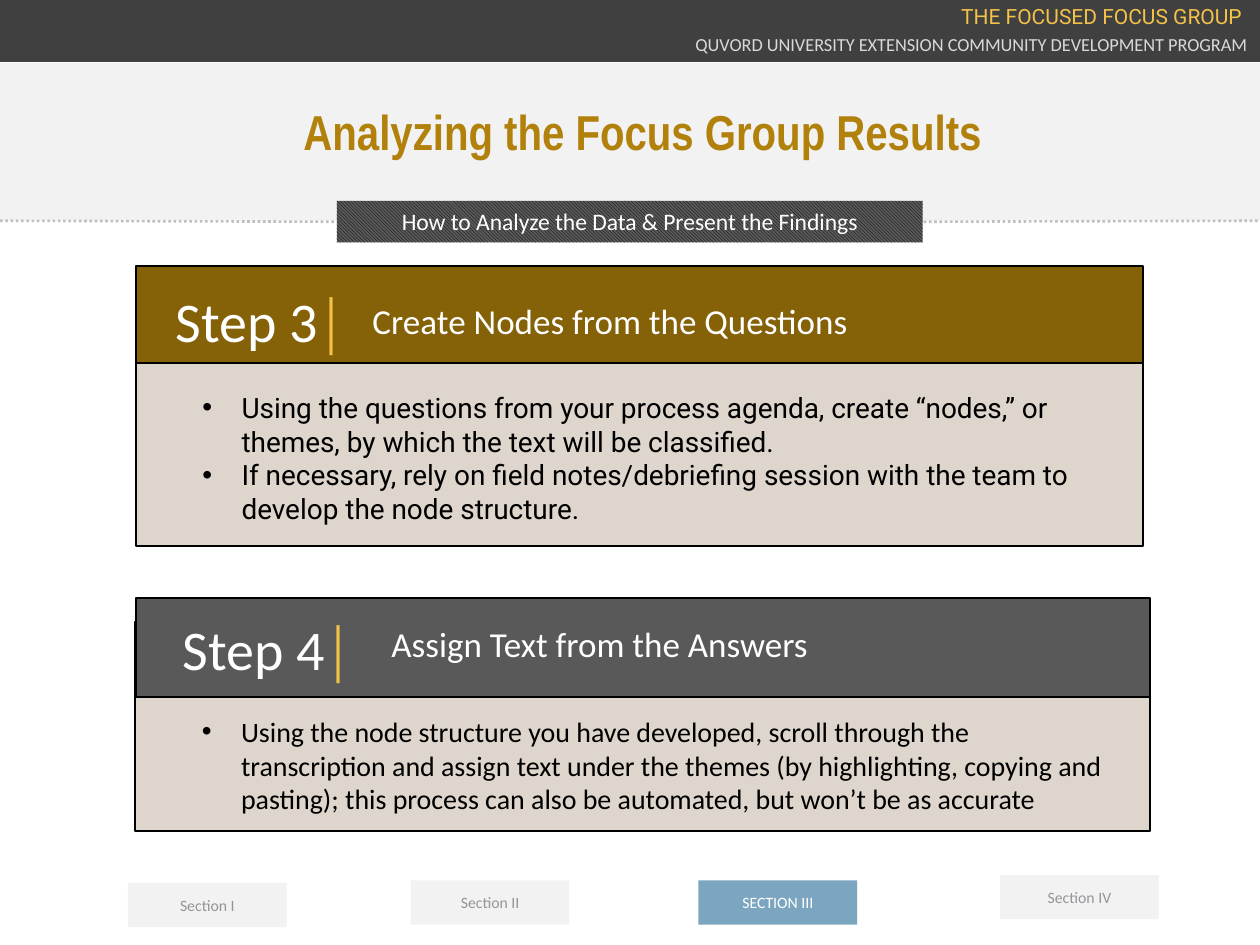
import dataclasses

import lxml.etree
import pptx
import pptx.dml.color
import pptx.enum.dml
import pptx.enum.shapes
import pptx.enum.text
import pptx.oxml.ns
import pptx.util

Cm = pptx.util.Cm
Align = pptx.enum.text.PP_ALIGN
Anchor = pptx.enum.text.MSO_ANCHOR


@dataclasses.dataclass(frozen=True)
class Theme:
    """Colours, fonts and type sizes of the slide."""

    white: str = "FFFFFF"
    black: str = "000000"
    pale: str = "F2F2F2"
    dark: str = "404040"
    slate: str = "595959"
    dots: str = "BFBFBF"
    program: str = "D9D9D9"
    muted: str = "949599"
    gold: str = "F4C249"
    title: str = "B1810B"
    brown: str = "856108"
    sand: str = "DED6CC"
    blue: str = "7CA6C0"
    body_font: str = "Calibri"
    title_font: str = "Arial Narrow"
    accent_font: str = "Roboto"
    bullet_font: str = "Arial"
    title_size: float = 28
    step_size: float = 32
    heading_size: float = 20
    bullet_size: float = 16
    banner_size: float = 13.5
    group_size: float = 12
    program_size: float = 10.5
    tab_size: float = 9


class SlideBuilder:
    """Draws styled elements on one slide, with boxes given in centimetres."""

    def __init__(self, slide, theme):
        self.slide = slide
        self.theme = theme

    def color(self, value):
        return pptx.dml.color.RGBColor.from_string(value)

    def style(self, paragraph, size, color, font=None, align=Align.LEFT, bold=False):
        paragraph.alignment = align
        paragraph.font.name = font or self.theme.body_font
        paragraph.font.size = pptx.util.Pt(size)
        paragraph.font.bold = bold
        paragraph.font.color.rgb = self.color(color)

    def rectangle(self, box, fill, outline=None):
        kind = pptx.enum.shapes.MSO_SHAPE.RECTANGLE
        shape = self.slide.shapes.add_shape(kind, *map(Cm, box))
        shape.shadow.inherit = False
        shape.fill.solid()
        shape.fill.fore_color.rgb = self.color(fill)
        if outline:
            shape.line.color.rgb = self.color(outline)
            shape.line.width = pptx.util.Pt(1)
        else:
            shape.line.fill.background()
        return shape

    def label(self, box, text, fill, size, color, anchor=Anchor.MIDDLE):
        shape = self.rectangle(box, fill)
        shape.text_frame.vertical_anchor = anchor
        paragraph = shape.text_frame.paragraphs[0]
        paragraph.text = text
        self.style(paragraph, size, color, align=Align.CENTER)
        return shape

    def banner(self, box, text):
        theme = self.theme
        shape = self.label(box, text, theme.slate, theme.banner_size, theme.white, Anchor.TOP)
        shape.fill.patterned()
        shape.fill.pattern = pptx.enum.dml.MSO_PATTERN.DARK_DOWNWARD_DIAGONAL
        shape.fill.fore_color.rgb = self.color(theme.black)
        shape.fill.back_color.rgb = self.color(theme.slate)

    def text_frame(self, box):
        frame = self.slide.shapes.add_textbox(*map(Cm, box)).text_frame
        frame.word_wrap = True
        return frame

    def text(self, box, text, size, color, **options):
        paragraph = self.text_frame(box).paragraphs[0]
        paragraph.text = text
        self.style(paragraph, size, color, **options)
        return paragraph

    def bullets(self, box, items, font):
        frame = self.text_frame(box)
        for index, item in enumerate(items):
            paragraph = frame.add_paragraph() if index else frame.paragraphs[0]
            paragraph.text = item
            paragraph.level = 1
            self.style(paragraph, self.theme.bullet_size, self.theme.black, font)
            properties = paragraph._p.get_or_add_pPr()
            properties.set("marL", str(Cm(2.08)))
            properties.set("indent", str(Cm(-0.79)))
            run_defaults = properties.find(pptx.oxml.ns.qn("a:defRPr"))
            for tag, name, value in [("a:buFont", "typeface", self.theme.bullet_font),
                                     ("a:buChar", "char", "•")]:
                element = lxml.etree.Element(pptx.oxml.ns.qn(tag), {name: value})
                run_defaults.addprevious(element)

    def dotted_line(self, *points):
        kind = pptx.enum.shapes.MSO_CONNECTOR.STRAIGHT
        connector = self.slide.shapes.add_connector(kind, *map(Cm, points))
        connector.line.color.rgb = self.color(self.theme.dots)
        connector.line.width = pptx.util.Pt(1.5)
        connector.line.dash_style = pptx.enum.dml.MSO_LINE.ROUND_DOT
        properties = connector._element.spPr
        lxml.etree.SubElement(properties, pptx.oxml.ns.qn("a:effectLst"))

    def step(self, name, heading, items, fill, font, boxes):
        theme = self.theme
        self.rectangle(boxes["body"], theme.sand, theme.black)
        self.rectangle(boxes["header"], fill, theme.black)
        self.text(boxes["heading"], heading, theme.heading_size, theme.white)
        paragraph = self.text(boxes["name"], name, theme.step_size, theme.white)
        divider = paragraph.add_run()
        divider.text = "│"
        divider.font.color.rgb = self.color(theme.gold)
        self.bullets(boxes["bullets"], items, font)


def main():
    presentation = pptx.Presentation()
    presentation.slide_width, presentation.slide_height = Cm(25.4), Cm(19.05)
    theme = Theme()
    builder = SlideBuilder(presentation.slides.add_slide(presentation.slide_layouts[6]), theme)

    builder.rectangle((0, 1.27, 25.4, 3.18), theme.pale)
    builder.banner((6.79, 4.05, 11.81, 0.84), "How to Analyze the Data & Present the Findings")
    builder.dotted_line(0, 4.45, 6.78, 4.47)
    builder.dotted_line(18.62, 4.47, 25.4, 4.45)
    builder.text((4.96, 1.93, 15.98, 1.45), "Analyzing the Focus Group Results", theme.title_size,
                 theme.title, font=theme.title_font, align=Align.CENTER, bold=True)

    builder.rectangle((0, 0, 25.4, 1.25), theme.dark)
    builder.text((8.81, 0.54, 16.59, 0.71),
                 "QUVORD UNIVERSITY EXTENSION COMMUNITY DEVELOPMENT PROGRAM",
                 theme.program_size, theme.program, align=Align.RIGHT)
    builder.text((8.93, -0.05, 16.36, 0.76), "THE FOCUSED FOCUS GROUP", theme.group_size,
                 theme.gold, font=theme.accent_font, align=Align.RIGHT)

    builder.step(
        "Step 3", "Create Nodes from the Questions",
        ["Using the questions from your process agenda, create “nodes,” or themes, "
         "by which the text will be classified.",
         "If necessary, rely on field notes/debriefing session with the team to "
         "develop the node structure."],
        theme.brown, theme.accent_font,
        {"body": (2.74, 6.48, 20.3, 4.53), "header": (2.74, 5.36, 20.3, 1.96),
         "heading": (7.26, 5.92, 15.09, 1.12), "name": (3.29, 5.66, 9.78, 1.63),
         "bullets": (2.54, 7.75, 19.79, 3)})
    builder.step(
        "Step 4", "Assign Text from the Answers",
        ["Using the node structure you have developed, scroll through the transcription "
         "and assign text under the themes (by highlighting, copying and pasting); "
         "this process can also be automated, but won’t be as accurate"],
        theme.slate, theme.body_font,
        {"body": (2.72, 12.53, 20.47, 4.22), "header": (2.74, 12.05, 20.45, 2.01),
         "heading": (7.64, 12.42, 10.69, 1.12), "name": (3.43, 12.27, 9.78, 1.63),
         "bullets": (2.53, 14.28, 19.96, 2.31)})

    for name, left, top, fill, color in [
        ("Section I", 2.58, 17.8, theme.pale, theme.muted),
        ("Section II", 8.28, 17.75, theme.pale, theme.muted),
        ("SECTION III", 14.08, 17.75, theme.blue, theme.white),
        ("Section IV", 20.16, 17.64, theme.pale, theme.muted),
    ]:
        builder.label((left, top, 3.2, 0.89), name, fill, theme.tab_size, color)

    presentation.save("out.pptx")


if __name__ == "__main__":
    main()
